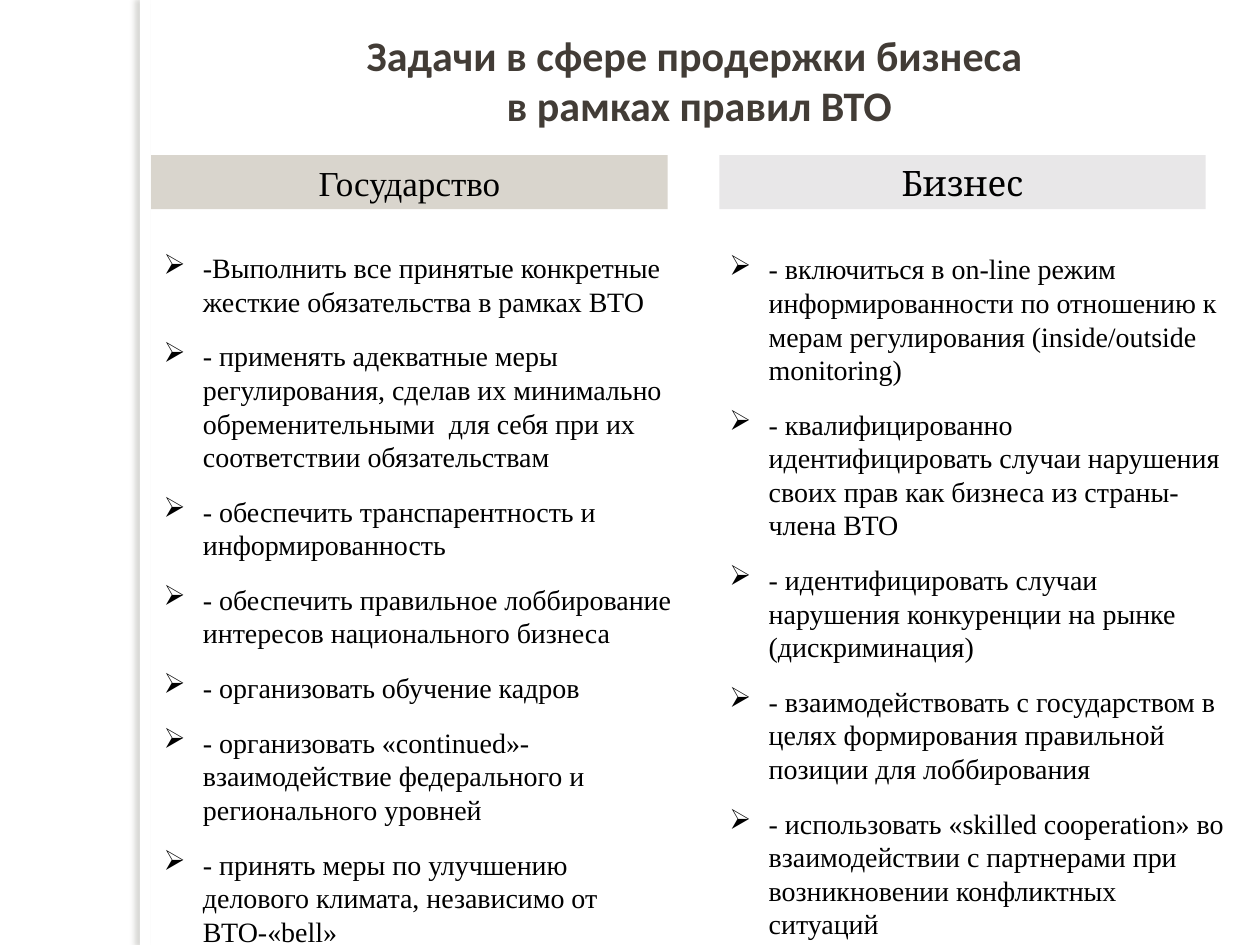
from dataclasses import dataclass

from lxml import etree
from pptx import Presentation
from pptx import util as u
from pptx.dml.color import RGBColor
from pptx.enum import shapes, text
from pptx.oxml import ns

Pt = u.Pt


@dataclass(frozen=True)
class Theme:
    paper: str = "FFFFFF"
    ink: str = "000000"
    head: str = "423C36"
    state: str = "D9D5CD"
    firm: str = "E8E7E8"
    shade: str = "68665B"
    sans: str = "Calibri"
    serif: str = "Times New Roman"
    book: str = "Cambria"
    big: int = 24
    mid: int = 20
    small: int = 16


THEME = Theme()

TITLE = ["Задачи в сфере продержки бизнеса ", "в рамках правил ВТО"]
STATE = [
    "-Выполнить все принятые конкретные жесткие обязательства в рамках ВТО",
    "- применять адекватные меры регулирования, сделав их минимально "
    "обременительными  для себя при их соответствии обязательствам",
    "- обеспечить транспарентность и информированность",
    "- обеспечить правильное лоббирование интересов национального бизнеса",
    "- организовать обучение кадров",
    "- организовать «continued»-взаимодействие федерального и "
    "регионального уровней",
    "- принять меры по улучшению делового климата, независимо от ВТО-«bell»",
]
FIRM = [
    "- включиться в on-line режим информированности по отношению к мерам "
    "регулирования (inside/outside monitoring)",
    "- квалифицированно идентифицировать случаи нарушения своих прав как "
    "бизнеса из страны-члена ВТО",
    "- идентифицировать случаи нарушения конкуренции на рынке (дискриминация)",
    "- взаимодействовать с государством в целях формирования правильной "
    "позиции для лоббирования",
    "- использовать «skilled cooperation» во взаимодействии с партнерами при "
    "возникновении конфликтных ситуаций",
]


def add_run(para, words, font, size, color, bold=False):
    run = para.add_run()
    run.text = words
    run.font.name = font
    run.font.size = Pt(size)
    run.font.bold = bold
    run.font.color.rgb = RGBColor.from_string(color)


def add_rect(slide, box, color):
    rect = slide.shapes.add_shape(shapes.MSO_SHAPE.RECTANGLE, *map(Pt, box))
    rect.shadow.inherit = False
    rect.fill.solid()
    rect.fill.fore_color.rgb = RGBColor.from_string(color)
    rect.line.fill.background()
    return rect


def add_edge(slide, box):
    """White strip that casts a soft shadow to its left."""
    strip = add_rect(slide, box, THEME.paper)
    glow = strip.element.spPr.find(ns.qn("a:effectLst"))
    cast = etree.SubElement(glow, ns.qn("a:outerShdw"), blurRad=str(Pt(3)),
                            dist=str(Pt(3)), dir="10800000", rotWithShape="0")
    tint = etree.SubElement(cast, ns.qn("a:srgbClr"), val=THEME.shade)
    etree.SubElement(tint, ns.qn("a:alpha"), val="25000")


def set_title(slide, box):
    title = slide.shapes.title
    title.left, title.top, title.width, title.height = map(Pt, box)
    frame = title.text_frame
    frame.vertical_anchor = text.MSO_ANCHOR.BOTTOM
    frame.auto_size = text.MSO_AUTO_SIZE.NONE
    para = frame.paragraphs[0]
    para.alignment = text.PP_ALIGN.CENTER
    for i, line in enumerate(TITLE):
        if i:
            para.add_line_break()
        add_run(para, line, THEME.sans, THEME.big, THEME.head, True)


def add_head(slide, box, words, font, color):
    """Filled bar that names a column."""
    frame = add_rect(slide, box, color).text_frame
    frame.auto_size = text.MSO_AUTO_SIZE.SHAPE_TO_FIT_TEXT
    frame.vertical_anchor = text.MSO_ANCHOR.TOP
    para = frame.paragraphs[0]
    para.alignment = text.PP_ALIGN.CENTER
    add_run(para, words, font, THEME.mid, THEME.ink)


def add_list(slide, box, items):
    """Column of tasks with arrow bullets."""
    frame = slide.shapes.add_textbox(*map(Pt, box)).text_frame
    frame.word_wrap = True
    frame.auto_size = text.MSO_AUTO_SIZE.SHAPE_TO_FIT_TEXT
    for i, item in enumerate(items):
        para = frame.add_paragraph() if i else frame.paragraphs[0]
        para.space_before = para.space_after = Pt(6)
        props = para._p.get_or_add_pPr()
        props.set("marL", str(Pt(22.5)))
        props.set("indent", str(-Pt(22.5)))
        etree.SubElement(props, ns.qn("a:buChar"), char="➢")
        add_run(para, item, THEME.serif, THEME.small, THEME.ink)


def main():
    deck = Presentation()
    deck.slide_width, deck.slide_height = Pt(720), Pt(540)
    slide = deck.slides.add_slide(deck.slide_layouts[5])

    # Left edge and title
    add_edge(slide, (80, 0, 6, 540))
    set_title(slide, (93.6, 9.4, 612, 68.4))

    # State column
    add_head(slide, (86.4, 88.6, 295.2, 31), "Государство",
             THEME.serif, THEME.state)
    add_list(slide, (86.4, 139.7, 306.7, 432.7), STATE)

    # Business column
    add_head(slide, (411.1, 88.6, 277.9, 31), "Бизнес",
             THEME.book, THEME.firm)
    add_list(slide, (409.7, 140.4, 300.2, 404.6), FIRM)

    deck.save("out.pptx")


if __name__ == "__main__":
    main()
